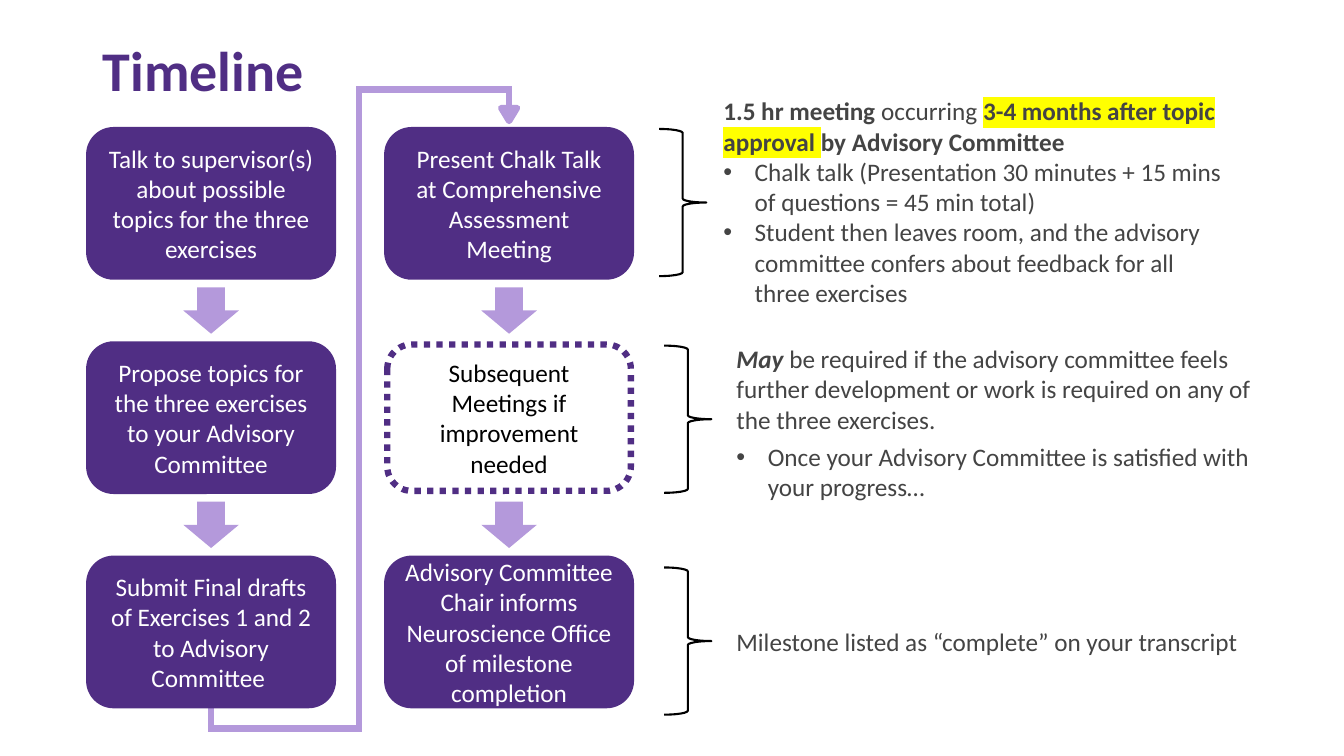
from lxml import etree
from pptx import Presentation
from pptx.dml.color import RGBColor
from pptx.enum.dml import MSO_LINE_DASH_STYLE as Dash
from pptx.enum.shapes import MSO_CONNECTOR, MSO_SHAPE as Shape
from pptx.enum.text import MSO_ANCHOR as Anchor, MSO_AUTO_SIZE as AutoSize, PP_ALIGN as Align
from pptx.oxml.ns import qn
from pptx.util import Cm, Pt

PURPLE = RGBColor(0x50, 0x2E, 0x84)
LILAC = RGBColor(0xB4, 0x99, 0xDB)
GREY = RGBColor(0x44, 0x44, 0x44)
BLACK = RGBColor(0, 0, 0)
WHITE = RGBColor(0xFF, 0xFF, 0xFF)
YELLOW = RGBColor(0xFF, 0xFF, 0)

BOX_W, BOX_H = 6.14, 3.69
ROW_TOP, ROW_STEP = 3.28, 5.4
COLUMNS = (2.25, 9.76)


class TimelineSlide:
    font = "Calibri"
    size = 18
    thick = Pt(4.5)

    def __init__(self, prs):
        self.s = prs.slides.add_slide(prs.slide_layouts[5])

    def style(self, r, color, size=None, bold=False, italic=False):
        f = r.font
        f.name, f.size, f.bold, f.italic = self.font, Pt(size or self.size), bold, italic
        f.color.rgb = color

    def title(self, text, x, y, w, h):
        sp = self.s.shapes.title
        sp.left, sp.top, sp.width, sp.height = Cm(x), Cm(y), Cm(w), Cm(h)
        tf = sp.text_frame
        tf.text = text
        tf.vertical_anchor = Anchor.MIDDLE
        p = tf.paragraphs[0]
        p.alignment, p.line_spacing = Align.LEFT, 0.9
        self.style(p.runs[0], PURPLE, 40, bold=True)

    def shape(self, kind, x, y, w, h, fill=None, line=None, width=None):
        sp = self.s.shapes.add_shape(kind, Cm(x), Cm(y), Cm(w), Cm(h))
        sp.shadow.inherit = False
        if fill is None:
            sp.fill.background()
        else:
            sp.fill.solid()
            sp.fill.fore_color.rgb = fill
        if line is None:
            sp.line.fill.background()
        else:
            sp.line.color.rgb, sp.line.width = line, width
        return sp

    def step(self, text, x, y, dotted=False, margin=0.28):
        sp = self.shape(Shape.ROUNDED_RECTANGLE, x, y, BOX_W, BOX_H,
                        None if dotted else PURPLE, PURPLE, self.thick)
        if dotted:
            sp.line.dash_style = Dash.ROUND_DOT
        tf = sp.text_frame
        tf.text = text
        tf.word_wrap = True
        tf.vertical_anchor = Anchor.MIDDLE
        tf.margin_left = tf.margin_right = Cm(margin)
        tf.margin_top = tf.margin_bottom = 0
        p = tf.paragraphs[0]
        p.alignment = Align.CENTER
        self.style(p.runs[0], BLACK if dotted else WHITE)
        return sp

    def line(self, start, end, source=None):
        c = self.s.shapes.add_connector(MSO_CONNECTOR.STRAIGHT, *map(Cm, start + end))
        if source is not None:
            c.begin_connect(source, 2)
        c.line.color.rgb, c.line.width = LILAC, self.thick
        sp_pr = c._element.spPr
        sp_pr.find(qn("a:ln")).set("cap", "sq")
        etree.SubElement(sp_pr, qn("a:effectLst"))
        # Behind the boxes
        self.s.shapes._spTree.insert(2, c._element)

    def brace(self, x, y):
        self.shape(Shape.RIGHT_BRACE, x, y, 1.19, 3.71, line=BLACK, width=Pt(1.5))

    def note(self, x, y, w, h, paragraphs):
        """Each paragraph is (bulleted, [(text, marks)]); marks: b, i, h."""
        tf = self.s.shapes.add_textbox(Cm(x), Cm(y), Cm(w), Cm(h)).text_frame
        tf.word_wrap = True
        tf.auto_size = AutoSize.SHAPE_TO_FIT_TEXT
        for i, (bulleted, runs) in enumerate(paragraphs):
            p = tf.add_paragraph() if i else tf.paragraphs[0]
            if bulleted:
                self.bullet(p)
            for text, marks in runs:
                r = p.add_run()
                r.text = text
                self.style(r, GREY, bold="b" in marks, italic="i" in marks)
                if "h" in marks:
                    self.highlight(r)

    def bullet(self, p):
        p_pr = p._p.get_or_add_pPr()
        p_pr.set("marL", str(Cm(0.79)))
        p_pr.set("indent", str(-Cm(0.79)))
        etree.SubElement(p_pr, qn("a:buFont")).set("typeface", "Arial")
        etree.SubElement(p_pr, qn("a:buChar")).set("char", "•")

    def highlight(self, r):
        mark = etree.Element(qn("a:highlight"))
        etree.SubElement(mark, qn("a:srgbClr")).set("val", str(YELLOW))
        r._r.rPr.find(qn("a:solidFill")).addnext(mark)


def main():
    prs = Presentation()
    prs.slide_width, prs.slide_height = Cm(33.87), Cm(19.05)
    slide = TimelineSlide(prs)
    slide.title("Timeline", 2.34, 0, 5.9, 3.68)

    # Two columns of steps with arrows between the rows
    steps = [
        [("Talk to supervisor(s) about possible topics for the three exercises", {}),
         ("Propose topics for the three exercises to your Advisory Committee", {}),
         ("Submit Final drafts of Exercises 1 and 2 to Advisory Committee ", {})],
        [("Present Chalk Talk at Comprehensive Assessment Meeting", {}),
         ("Subsequent Meetings if improvement needed", {"dotted": True}),
         ("Advisory Committee Chair informs Neuroscience Office of milestone completion",
          {"margin": 0.13})],
    ]
    last_boxes = []
    for x, column in zip(COLUMNS, steps):
        for row, (text, options) in enumerate(column):
            y = ROW_TOP + row * ROW_STEP
            box = slide.step(text, x, y, **options)
            if row < len(column) - 1:
                slide.shape(Shape.DOWN_ARROW, x + 2.37, y + 3.96, 1.4, 1.17, LILAC)
        last_boxes.append(box)

    # Route from the foot of the first column to the head of the second
    start_x, end_x = (x + BOX_W / 2 for x in COLUMNS)
    lane_x, top_y, foot_y = 9.04, 2.26, 18.36
    route = [(start_x, ROW_TOP + 2 * ROW_STEP + BOX_H), (start_x, foot_y),
             (lane_x, foot_y), (lane_x, top_y), (end_x, top_y), (end_x, 2.8)]
    for i, (start, end) in enumerate(zip(route, route[1:])):
        slide.line(start, end, None if i else last_boxes[0])
    head = slide.shape(Shape.ISOSCELES_TRIANGLE, end_x - 0.2, 2.72, 0.4, 0.33,
                       LILAC, LILAC, slide.thick)
    head.rotation = 180

    # Braces and explanations
    for x, y in ((16.61, 3.25), (16.74, 8.71), (16.74, 14.3)):
        slide.brace(x, y)
    slide.note(17.98, 2.29, 13.08, 5.64, [
        (False, [("1.5 hr meeting ", "b"), ("occurring ", ""),
                 ("3-4 months after topic approval ", "bh"),
                 ("by Advisory Committee", "b")]),
        (True, [("Chalk talk (Presentation 30 minutes + 15 mins of questions"
                 " = 45 min total)", "")]),
        (True, [("Student then leaves room, and the advisory committee confers"
                 " about feedback for all three exercises", "")]),
    ])
    slide.note(18.31, 8.53, 13.61, 2.57, [
        (False, [("May ", "bi"),
                 ("be required if the advisory committee feels further development"
                  " or work is required on any of the three exercises.", "")]),
    ])
    slide.note(18.31, 11, 13.61, 1.8, [
        (True, [("Once your Advisory Committee is satisfied with your progress…", "")]),
    ])
    slide.note(18.31, 15.65, 13.61, 1.02, [
        (False, [("Milestone listed as “complete” on your transcript", "")]),
    ])

    prs.save("out.pptx")


if __name__ == "__main__":
    main()
